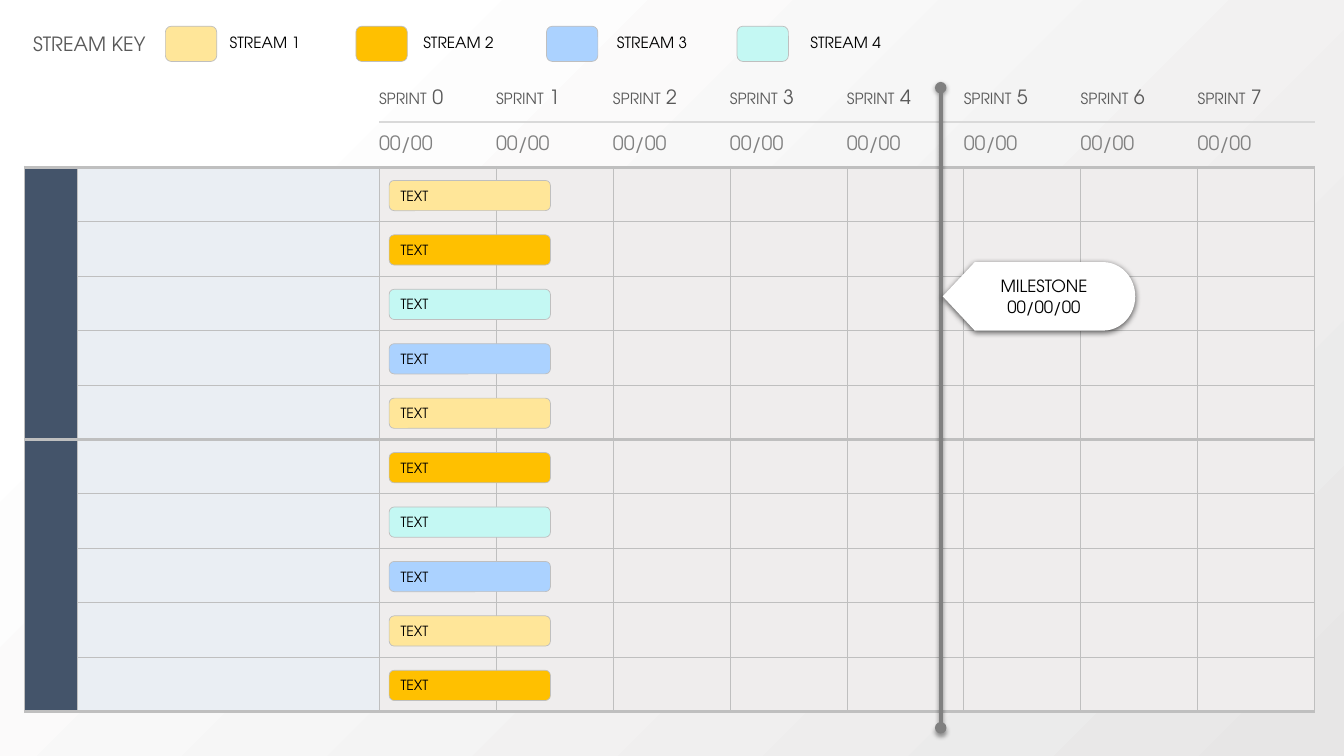
from lxml import etree
from pptx import Presentation
from pptx import util as u
from pptx.dml.color import RGBColor
from pptx.enum import shapes, text
from pptx.oxml import ns

YELLOW, GOLD, AQUA, BLUE = "FFE699", "FFC000", "C4F8F3", "ABD2FF"
WHITE, BLACK, DARK, MID = "FFFFFF", "000000", "595959", "808080"
RULE, PALE_RULE = "BFBFBF", "D9D9D9"
NAVY, LABEL_FILL, GRID_FILL = "44546A", "EAEEF3", "EFEDED"

SPRINTS = 8
HEADER_ROWS = 2
GROUP_ROWS = 5
TASKS = 10
ROW_HEIGHT = 0.54


def rgb(value):
    return RGBColor.from_string(value)


def add_element(parent, tag, **attributes):
    child = etree.SubElement(parent, ns.qn(tag))
    for name, value in attributes.items():
        child.set(name, str(value))
    return child


class Roadmap:
    """Holds the style and the slide being drawn."""

    font = "TeX Gyre Adventor"

    def __init__(self, page):
        self.page = page

    def background(self):
        fill = self.page.background.fill
        fill.gradient()
        fill.gradient_angle = 135
        for stop, position, color in zip(fill.gradient_stops, (0, 0.83), ("E7E6E6", WHITE)):
            stop.position = position
            stop.color.rgb = rgb(color)
        first_color = next(self.page.element.iter(ns.qn("a:srgbClr")))
        add_element(first_color, "a:alpha", val=62000)

    def fill_text(self, frame, lines, color, align=None, **frame_format):
        """Fill a text frame; each line is a list of (words, size) spans."""
        for name, value in frame_format.items():
            setattr(frame, name, value)
        for index, line in enumerate(lines):
            para = frame.add_paragraph() if index else frame.paragraphs[0]
            para.alignment = align
            for words, size in line:
                span = para.add_run()
                span.text = words
                for name, value in {"name": self.font, "size": u.Pt(size)}.items():
                    setattr(span.font, name, value)
                span.font.color.rgb = rgb(color)

    def label(self, left, top, width, height, words, size, color):
        box = self.page.shapes.add_textbox(*map(u.Inches, (left, top, width, height)))
        self.fill_text(box.text_frame, [[(words, size)]], color, word_wrap=False,
                       auto_size=text.MSO_AUTO_SIZE.SHAPE_TO_FIT_TEXT)
        return box

    def shape(self, kind, left, top, width, height, fill, line=None):
        shape = self.page.shapes.add_shape(kind, *map(u.Inches, (left, top, width, height)))
        shape.fill.solid()
        shape.fill.fore_color.rgb = rgb(fill)
        if line:
            shape.line.color.rgb = rgb(line)
            shape.line.width = u.Pt(0.5)
        else:
            shape.line.fill.background()
        shape.shadow.inherit = False
        return shape

    def shape_text(self, shape, lines, align):
        self.fill_text(shape.text_frame, lines, BLACK, align, word_wrap=True,
                       vertical_anchor=text.MSO_ANCHOR.MIDDLE, margin_left=u.Inches(0.1),
                       margin_top=0, margin_right=0, margin_bottom=0)

    def shadow(self, effects, alpha, blur, distance):
        outer = add_element(effects, "a:outerShdw", blurRad=u.Pt(blur), dist=u.Pt(distance),
                            dir=5400000, algn="t", rotWithShape=0)
        add_element(add_element(outer, "a:srgbClr", val=BLACK), "a:alpha", val=alpha * 1000)

    def task_bar(self, top, color):
        bar = self.shape(shapes.MSO_SHAPE.ROUNDED_RECTANGLE, 3.86, top, 1.6, 0.3, color, RULE)
        self.shape_text(bar, [[("TEXT", 10)]], text.PP_ALIGN.LEFT)

    def milestone(self, lines):
        x = u.Inches(9.33)
        pin = self.page.shapes.add_connector(
            shapes.MSO_CONNECTOR.STRAIGHT, x, u.Inches(0.87), x, u.Inches(7.22))
        pin.line.color.rgb = rgb(MID)
        pin.line.width = u.Pt(2.75)
        outline = pin.line._get_or_add_ln()
        for end in ("a:headEnd", "a:tailEnd"):
            add_element(outline, end, type="oval")
        self.shadow(add_element(pin._element.spPr, "a:effectLst"), 38, 3.1, 1.6)

        flag = self.shape(shapes.MSO_SHAPE.FLOWCHART_DISPLAY, 9.35, 2.6, 1.91, 0.68, WHITE)
        self.shadow(flag._element.spPr.find(ns.qn("a:effectLst")), 63, 4.5, 1.5)
        self.shape_text(flag, [[(line, 12)] for line in lines], text.PP_ALIGN.CENTER)
        self.page.shapes.add_group_shape([pin, flag])

    def stream_key(self, colors):
        parts = []
        for index, color in enumerate(colors):
            parts.append(self.shape(shapes.MSO_SHAPE.ROUNDED_RECTANGLE,
                                    1.64 + 1.89 * index, 0.26, 0.51, 0.35, color, RULE))
            parts.append(self.label(2.18 + 1.92 * index, 0.28, 0.92, 0.29,
                                    f"STREAM {index + 1}", 11, BLACK))
        self.page.shapes.add_group_shape(parts)

    def borders(self, cell, edges):
        """Set all four edges from {side: (color, points)}; a missing side is bare."""
        properties = cell._tc.get_or_add_tcPr()
        for position, side in enumerate("LRTB"):
            line = etree.Element(ns.qn(f"a:ln{side}"))
            if side in edges:
                color, points = edges[side]
                line.set("w", str(u.Pt(points)))
                add_element(add_element(line, "a:solidFill"), "a:srgbClr", val=color)
            else:
                add_element(line, "a:noFill")
            properties.insert(position, line)

    def header_cell(self, cell, row, column):
        cell.fill.background()
        edges = {"B": (RULE, 2.25)} if row else {}
        if column >= 2:
            edges["T" if row else "B"] = (PALE_RULE, 1)
            number = column - 2
            spans = [("00/00", 14)] if row else [("SPRINT", 11), (f" {number}", 14)]
            for side in ("left", "top", "right", "bottom"):
                setattr(cell, f"margin_{side}", 0)
            cell.vertical_anchor = text.MSO_ANCHOR.MIDDLE
            self.fill_text(cell.text_frame, [spans], MID if row else DARK)
        self.borders(cell, edges)

    def body_cell(self, cell, row, column):
        cell.fill.solid()
        cell.fill.fore_color.rgb = rgb((NAVY, LABEL_FILL)[column] if column < 2 else GRID_FILL)
        place = (row - HEADER_ROWS) % GROUP_ROWS
        first, last = place == 0, place == GROUP_ROWS - 1
        edges = {"L": (RULE, 1 if column == 1 else 0.5), "R": (RULE, 0.5 if column else 1)}
        if column or first:
            edges["T"] = (RULE, 2.25 if first else 0.5)
        if column or first or last:
            edges["B"] = (RULE, 2.25 if last or not column else 0.5)
        self.borders(cell, edges)

    def plan(self):
        widths = [0.53, 2.99] + [1.16] * SPRINTS
        heights = [0.45] * HEADER_ROWS + [ROW_HEIGHT] * TASKS
        frame = self.page.shapes.add_table(
            len(heights), len(widths),
            *map(u.Inches, (0.24, 0.76, sum(widths), sum(heights))))
        table = frame.table
        table.first_row = table.horz_banding = False
        for column, width in zip(table.columns, widths):
            column.width = u.Inches(width)
        for row, height in zip(table.rows, heights):
            row.height = u.Inches(height)
        for start in range(HEADER_ROWS, len(heights), GROUP_ROWS):
            table.cell(start, 0).merge(table.cell(start + GROUP_ROWS - 1, 0))
        for row in range(len(heights)):
            draw = self.header_cell if row < HEADER_ROWS else self.body_cell
            for column in range(len(widths)):
                draw(table.cell(row, column), row, column)


def main():
    deck = Presentation()
    deck.slide_width, deck.slide_height = u.Inches(13.33), u.Inches(7.5)
    roadmap = Roadmap(deck.slides.add_slide(deck.slide_layouts[6]))
    roadmap.background()
    roadmap.plan()
    roadmap.milestone(["MILESTONE", "00/00/00"])
    roadmap.stream_key([YELLOW, GOLD, BLUE, AQUA])
    roadmap.label(0.23, 0.27, 1.33, 0.34, "STREAM KEY", 14, DARK)
    bar_colors = [YELLOW, GOLD, AQUA, BLUE]
    for index in range(TASKS):
        roadmap.task_bar(1.79 + ROW_HEIGHT * index, bar_colors[index % len(bar_colors)])
    deck.save("out.pptx")


if __name__ == "__main__":
    main()
